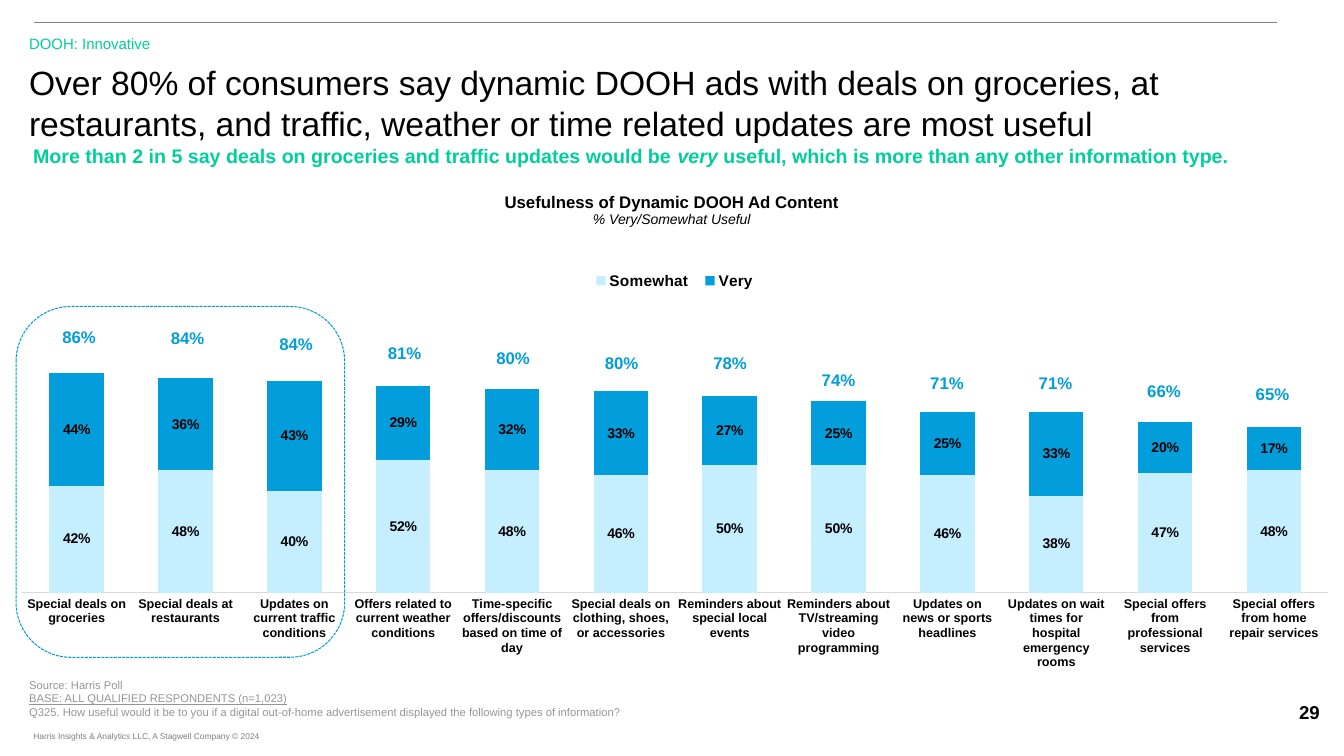
from lxml.etree import SubElement
from pptx import Presentation
from pptx.chart.data import CategoryChartData as ChartData
from pptx.dml.color import RGBColor as Color
from pptx.enum.chart import XL_CHART_TYPE as Chart, XL_LEGEND_POSITION as Legend, XL_TICK_MARK as Tick
from pptx.enum.dml import MSO_LINE as Dash
from pptx.enum.shapes import MSO_CONNECTOR as Link, MSO_SHAPE as Shape
from pptx.enum.text import PP_ALIGN as Align
from pptx.oxml.ns import qn
from pptx.util import Pt

THEME = {
    "font": "Arial",
    "ink": "000000", "green": "00CF9C", "blue": "019EDB", "pale": "C5EFFF",
    "note": "939598", "foot": "7F7F7F", "rule": "808080", "axis": "D9D9D9",
    "title": 24, "lead": 14, "page": 13.3, "head": 12, "key": 11,
    "tag": 10.7, "value": 10, "label": 9, "small": 8, "tiny": 6,
}

BARS = [
    ("Special deals on groceries", 0.42, 0.44, "86%", 229.7),
    ("Special deals at restaurants", 0.48, 0.36, "84%", 230.4),
    ("Updates on current traffic conditions", 0.40, 0.43, "84%", 234.7),
    ("Offers related to current weather conditions", 0.52, 0.29, "81%", 241.2),
    ("Time-specific offers/discounts based on time of day", 0.48, 0.32, "80%", 244.8),
    ("Special deals on clothing, shoes, or accessories", 0.46, 0.33, "80%", 248.4),
    ("Reminders about special local events", 0.50, 0.27, "78%", 248.4),
    ("Reminders about TV/streaming video programming", 0.50, 0.25, "74%", 260.6),
    ("Updates on news or sports headlines", 0.46, 0.25, "71%", 262.8),
    ("Updates on wait times for hospital emergency rooms", 0.38, 0.33, "71%", 262.8),
    ("Special offers from professional services", 0.47, 0.20, "66%", 268.6),
    ("Special offers from home repair services", 0.48, 0.17, "65%", 270.7),
]
SERIES = [("Somewhat", "pale"), ("Very", "blue")]

TEXTS = [
    ((898.6, 496.8, 73.4, 23.8), "page", "ink", Align.CENTER, [[("29", "b")]]),
    ((13.7, 20.9, 480.2, 20.2), "tag", "green", Align.LEFT, [[("DOOH: Innovative", "")]]),
    ((13.7, 41, 897.8, 33.8), "title", "ink", Align.LEFT, [[
        ("Over 80% of consumers say dynamic DOOH ads with deals on groceries, at restaurants, "
         "and traffic, weather or time related updates are most useful", "")]]),
    ((16.6, 99.4, 897.8, 29.5), "lead", "green", Align.LEFT, [[
        ("More than 2 in 5 say deals on groceries and traffic updates would be ", "b"),
        ("very ", "bi"),
        ("useful, which is more than any other information type.", "b")]]),
    ((13.7, 481, 728.6, 36), "small", "note", Align.LEFT, [
        [("Source: Harris Poll", "")],
        [("BASE: ALL QUALIFIED RESPONDENTS (n=1,023)", "u")],
        [("Q325. How useful would it be to you if a digital out-of-home advertisement "
          "displayed the following types of information?", "")]]),
    ((293, 133.2, 373.7, 34.6), "head", "ink", Align.CENTER, [
        [("Usefulness of Dynamic DOOH Ad Content", "b")]]),
    ((293, 147, 373.7, 21), "value", "ink", Align.CENTER, [
        [("% Very/Somewhat Useful", "i")]]),
]
FOOT = "Harris Insights & Analytics LLC, A Stagwell Company © 2024"


def paint(font, size, tint, marks=""):
    font.name = THEME["font"]
    font.size = Pt(THEME[size])
    font.color.rgb = Color.from_string(THEME[tint])
    font.bold = "b" in marks
    font.italic = "i" in marks
    if "u" in marks:
        font.underline = True


def write(slide, area, size, tint, align, rows):
    frame = slide.shapes.add_textbox(*map(Pt, area)).text_frame
    frame.word_wrap = True
    for i, row in enumerate(rows):
        para = frame.add_paragraph() if i else frame.paragraphs[0]
        para.alignment = align
        for text, marks in row:
            run = para.add_run()
            run.text = text
            paint(run.font, size, tint, marks)
    return frame


def place(node, x, y, w, h, inner=False):
    old = node.find(qn("c:layout"))
    if old is not None:
        node.remove(old)
    box = SubElement(node, qn("c:layout"))
    node.remove(box)
    node.insert(1 if node.tag == qn("c:legend") else 0, box)
    spot = SubElement(box, qn("c:manualLayout"))
    parts = [("layoutTarget", "inner")] if inner else []
    parts += [("xMode", "edge"), ("yMode", "edge"), ("x", x), ("y", y), ("w", w), ("h", h)]
    for name, value in parts:
        SubElement(spot, qn("c:" + name)).set("val", str(value))


def draw_chart(slide):
    data = ChartData(number_format="0%")
    data.categories = [bar[0] for bar in BARS]
    for i, (name, _) in enumerate(SERIES, 1):
        data.add_series(name, [bar[i] for bar in BARS])
    area = map(Pt, (0, 184.3, 993.6, 296.6))
    chart = slide.shapes.add_chart(Chart.COLUMN_STACKED, *area, data).chart
    chart.has_title = False
    paint(chart.font, "lead", "ink")

    plot = chart.plots[0]
    plot.gap_width, plot.overlap = 100, 100
    plot.vary_by_categories = False
    for series, (_, tint) in zip(plot.series, SERIES):
        series.format.fill.solid()
        series.format.fill.fore_color.rgb = Color.from_string(THEME[tint])
        labels = series.data_labels
        labels.show_value = True
        labels.number_format = "0%"
        labels.number_format_is_linked = False
        paint(labels.font, "value", "ink", "b")

    scale = chart.value_axis
    scale.minimum_scale, scale.maximum_scale = 0, 1
    scale.has_major_gridlines = False
    scale.visible = False
    axis = chart.category_axis
    axis.major_tick_mark = axis.minor_tick_mark = Tick.NONE
    axis.format.line.color.rgb = Color.from_string(THEME["axis"])
    axis.format.line.width = Pt(0.75)
    paint(axis.tick_labels.font, "label", "ink", "b")

    chart.has_legend = True
    key = chart.legend
    key.position = Legend.TOP
    key.include_in_layout = False
    paint(key.font, "key", "ink", "b")
    nodes = chart.element
    place(nodes.find(".//" + qn("c:legend")), 0.42, 0.02, 0.13, 0.07)
    place(nodes.find(".//" + qn("c:plotArea")), 0.016, 0.192, 0.939, 0.614, True)


def main():
    deck = Presentation()
    deck.slide_width, deck.slide_height = Pt(960), Pt(540)
    slide = deck.slides.add_slide(deck.slide_layouts[6])

    rule = slide.shapes.add_connector(Link.STRAIGHT, *map(Pt, (24.5, 15.8, 912.2, 15.8)))
    rule.line.color.rgb = Color.from_string(THEME["rule"])
    rule.line.width = Pt(0.5)
    SubElement(rule.element.spPr, qn("a:effectLst"))

    for text in TEXTS:
        write(slide, *text)
    foot = write(slide, (23.8, 518.4, 172, 14.4), "tiny", "foot", Align.LEFT, [[(FOOT, "")]])
    foot.margin_left = 0
    foot.word_wrap = False

    draw_chart(slide)
    for i, (*_, total, top) in enumerate(BARS):
        area = (21.6 + 77.5 * i, top, 69.8, 21.6)
        write(slide, area, "head", "blue", Align.CENTER, [[(total, "b")]])

    ring = slide.shapes.add_shape(Shape.ROUNDED_RECTANGLE, *map(Pt, (11.5, 218.9, 234.7, 250.6)))
    ring.shadow.inherit = False
    ring.fill.background()
    ring.line.color.rgb = Color.from_string(THEME["blue"])
    ring.line.width = Pt(0.75)
    ring.line.dash_style = Dash.SQUARE_DOT

    deck.save("out.pptx")


if __name__ == "__main__":
    main()
